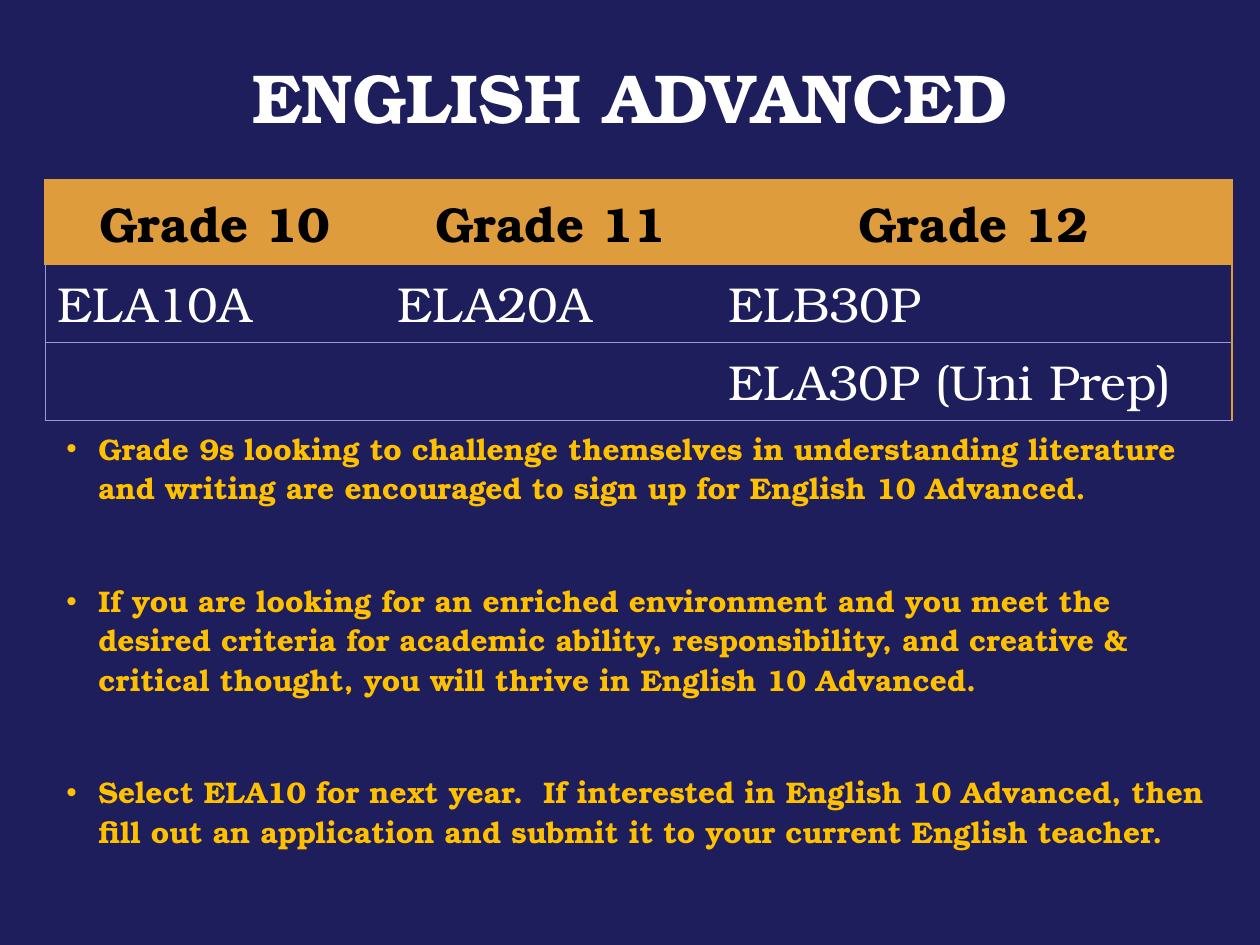
from dataclasses import dataclass

from lxml.etree import SubElement
from pptx import Presentation
from pptx.dml.color import RGBColor
from pptx.enum.text import MSO_ANCHOR, MSO_AUTO_SIZE, PP_ALIGN
from pptx.oxml.ns import qn
from pptx.util import Pt


@dataclass(frozen=True)
class Theme:
    font: str = "TeX Gyre Bonum"
    navy: str = "1E1E5C"
    gold: str = "DE9C3C"
    lavender: str = "9999DD"
    yellow: str = "FFC000"
    white: str = "FFFFFF"
    black: str = "000000"
    title_size: float = 39.6
    table_size: float = 28
    advice_size: float = 17


theme = Theme()
PX = 914400 // 126


def write(paragraph, text, *, size, color, bold=False, align=PP_ALIGN.LEFT, spacing=1.0, before=0):
    paragraph.text = text
    paragraph.alignment = align
    paragraph.line_spacing = spacing
    paragraph.space_before = Pt(before)
    font = paragraph.font
    font.name = theme.font
    font.size = Pt(size)
    font.bold = bold
    font.color.rgb = RGBColor.from_string(color)


def set_border(cell, side, color, width):
    line = SubElement(cell._tc.get_or_add_tcPr(), qn(f"a:ln{side}"), w=str(Pt(width)))
    if color is None:
        SubElement(line, qn("a:noFill"))
    else:
        SubElement(SubElement(line, qn("a:solidFill")), qn("a:srgbClr"), val=color)


prs = Presentation()
prs.slide_width = 1260 * PX
prs.slide_height = 945 * PX
slide = prs.slides.add_slide(prs.slide_layouts[5])
slide.background.fill.solid()
slide.background.fill.fore_color.rgb = RGBColor.from_string(theme.navy)

heading = slide.shapes.title
heading.left, heading.top, heading.width, heading.height = 210 * PX, 23 * PX, 840 * PX, 157 * PX
heading.text_frame.vertical_anchor = MSO_ANCHOR.MIDDLE
heading.text_frame.auto_size = MSO_AUTO_SIZE.NONE
write(heading.text_frame.paragraphs[0], "ENGLISH ADVANCED", size=theme.title_size,
      color=theme.white, bold=True, align=PP_ALIGN.CENTER, spacing=0.9)

advice = [
    "Grade 9s looking to challenge themselves in understanding literature and writing "
    "are encouraged to sign up for English 10 Advanced.",
    "If you are looking for an enriched environment and you meet the desired criteria for "
    "academic ability, responsibility, and creative & critical thought, you will thrive in "
    "English 10 Advanced.",
    "Select ELA10 for next year.  If interested in English 10 Advanced, then fill out an "
    "application and submit it to your current English teacher.",
]
advice_frame = slide.shapes.add_textbox(54 * PX, 421 * PX, 1168 * PX, 503 * PX).text_frame
advice_frame.word_wrap = True
for index, sentence in enumerate(advice):
    point = advice_frame.add_paragraph() if index else advice_frame.paragraphs[0]
    properties = point._p.get_or_add_pPr()
    properties.set("marL", str(32 * PX))
    properties.set("indent", str(-32 * PX))
    SubElement(properties, qn("a:buFont"), typeface="Arial")
    SubElement(properties, qn("a:buChar"), char="•")
    write(point, sentence, size=theme.advice_size, color=theme.yellow, bold=True,
          spacing=1.1, before=42 if index else 0)

courses = [
    ["Grade 10", "Grade 11", "Grade 12"],
    ["ELA10A", "ELA20A", "ELB30P"],
    ["", "", "ELA30P (Uni Prep)"],
]
column_widths = [340, 331, 516]
row_heights = [84, 78, 78]
grades = slide.shapes.add_table(3, 3, 45 * PX, 180 * PX, sum(column_widths) * PX,
                                sum(row_heights) * PX).table
for column, width in zip(grades.columns, column_widths):
    column.width = width * PX
for row, height in zip(grades.rows, row_heights):
    row.height = height * PX

for row_index, row_courses in enumerate(courses):
    header = row_index == 0
    edge = (theme.gold, 1) if header else (theme.lavender, 0.5)
    above = (theme.gold, 1) if row_index < 2 else edge
    for column_index, course in enumerate(row_courses):
        cell = grades.cell(row_index, column_index)
        cell.vertical_anchor = MSO_ANCHOR.MIDDLE if header else MSO_ANCHOR.TOP
        write(cell.text_frame.paragraphs[0], course, size=theme.table_size,
              color=theme.black if header else theme.white, bold=header,
              align=PP_ALIGN.CENTER if header else PP_ALIGN.LEFT)
        set_border(cell, "L", *(edge if column_index == 0 else (None, 0)))
        set_border(cell, "R", *((theme.gold, 1) if column_index == 2 else (None, 0)))
        set_border(cell, "T", *above)
        set_border(cell, "B", *edge)
        cell.fill.solid()
        cell.fill.fore_color.rgb = RGBColor.from_string(theme.gold if header else theme.navy)

prs.save("out.pptx")
